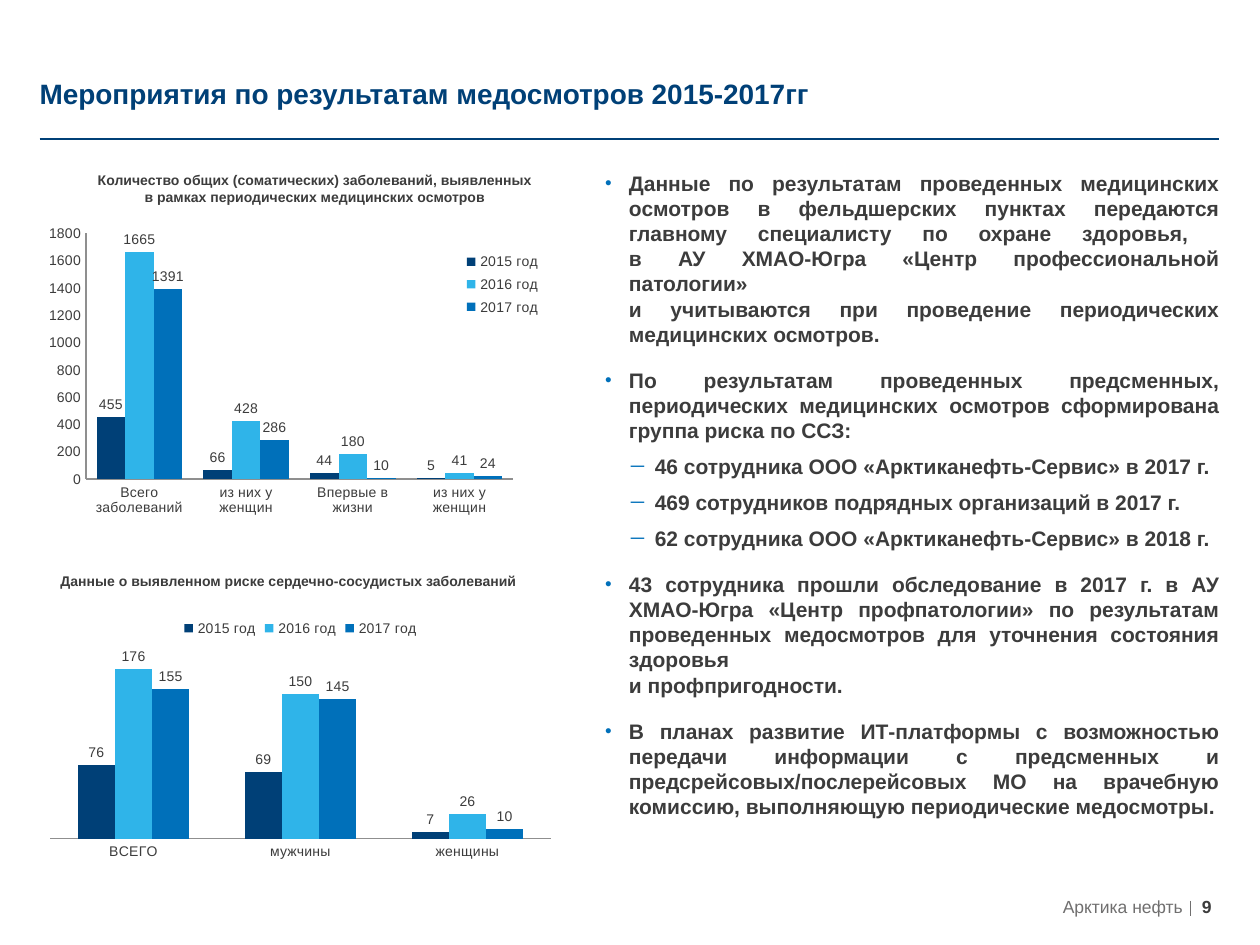
import pptx
import pptx.util
import pptx.dml.color
import pptx.chart.data
import pptx.enum.chart
import pptx.enum.shapes
import pptx.enum.text
import pptx.oxml
import pptx.oxml.ns
import lxml.etree

Cm = pptx.util.Cm
Pt = pptx.util.Pt
Align = pptx.enum.text.PP_ALIGN
Anchor = pptx.enum.text.MSO_ANCHOR
Place = pptx.enum.chart.XL_LEGEND_POSITION
Tick = pptx.enum.chart.XL_TICK_MARK
qn = pptx.oxml.ns.qn

hues = {"navy": "004077", "sky": "2FB4E9", "blue": "0070BA",
        "text": "3C3C3C", "gray": "706F6F", "axis": "8F8F8F"}
rgb = {name: pptx.dml.color.RGBColor.from_string(code) for name, code in hues.items()}


def add_text(area, lines, size, hue="text", bold=True, align=Align.LEFT,
             anchor=Anchor.TOP, inset=(0, 0)):
    box = slide.shapes.add_textbox(*[Cm(n) for n in area])
    frame = box.text_frame
    frame.word_wrap = True
    frame.vertical_anchor = anchor
    frame.margin_left = frame.margin_right = Cm(inset[0])
    frame.margin_top = frame.margin_bottom = Cm(inset[1])
    for rank, line in enumerate(lines):
        para = frame.add_paragraph() if rank else frame.paragraphs[0]
        para.text = line
        para.alignment = align
        for run in para.runs:
            run.font.name = "Arial"
            run.font.size = Pt(size)
            run.font.bold = bold
            run.font.color.rgb = rgb[hue]
    return frame


def set_layout(node, spots, inner=False):
    old = node.find(qn("c:layout"))
    if old is not None:
        node.remove(old)
    layout = lxml.etree.Element(qn("c:layout"))
    manual = lxml.etree.SubElement(layout, qn("c:manualLayout"))
    parts = [("layoutTarget", "inner")] if inner else []
    parts += [("xMode", "edge"), ("yMode", "edge")] + list(zip("xywh", spots))
    for tag, val in parts:
        lxml.etree.SubElement(manual, qn("c:" + tag)).set("val", str(val))
    head = node.find(qn("c:legendPos"))
    node.insert(0 if head is None else node.index(head) + 1, layout)


deck = pptx.Presentation()
deck.slide_width = Cm(25.4)
deck.slide_height = Cm(19.05)
slide = deck.slides.add_slide(deck.slide_layouts[6])

rules = [(0.8, 2.8, 24.58, 2.8, "navy", 1),
         (24, 18.16, 24, 18.47, "gray", 0.75)]
for *ends, hue, width in rules:
    rule = slide.shapes.add_connector(
        pptx.enum.shapes.MSO_CONNECTOR.STRAIGHT, *[Cm(n) for n in ends])
    rule.line.color.rgb = rgb[hue]
    rule.line.width = Pt(width)
    lxml.etree.SubElement(rule._element.spPr, qn("a:effectLst"))

add_text((0.8, 0.53, 23.77, 1.7), ["Мероприятия по результатам медосмотров 2015-2017гг"],
         16, "navy", anchor=Anchor.BOTTOM)
add_text((24.23, 18.06, 0.61, 0.46), ["9"], 10)
add_text((15.1, 18.05, 8.74, 0.46), ["Арктика нефть"], 10, "gray", False,
         Align.RIGHT, Anchor.MIDDLE)

items = [
    (0, "Данные по результатам проведенных медицинских осмотров в фельдшерских пунктах "
        "передаются главному специалисту по охране здоровья, \v"
        "в АУ ХМАО-Югра «Центр профессиональной патологии» \v"
        "и учитываются при проведение периодических медицинских осмотров."),
    (0, "По результатам проведенных предсменных, периодических медицинских осмотров "
        "сформирована группа риска по ССЗ:"),
    (1, "46 сотрудника ООО «Арктиканефть-Сервис» в 2017 г."),
    (1, "469 сотрудников подрядных организаций в 2017 г."),
    (1, "62 сотрудника ООО «Арктиканефть-Сервис» в 2018 г."),
    (0, "43 сотрудника прошли обследование в 2017 г. в АУ ХМАО-Югра «Центр профпатологии» "
        "по результатам проведенных медосмотров для уточнения состояния здоровья \v"
        "и профпригодности."),
    (0, "В планах развитие ИТ-платформы с возможностью передачи информации с предсменных и "
        "предсрейсовых/послерейсовых МО на врачебную комиссию, выполняющую "
        "периодические медосмотры."),
]
body = add_text((12.2, 3.43, 12.39, 13.3), [text for _, text in items], 12,
                align=Align.JUSTIFY)
for rank, (para, (level, _)) in enumerate(zip(body.paragraphs, items)):
    props = para._p.get_or_add_pPr()
    props.set("marL", str(Cm(0.48 + 0.52 * level)))
    props.set("indent", str(-Cm(0.48)))
    color = lxml.etree.SubElement(props, qn("a:buClr"))
    lxml.etree.SubElement(color, qn("a:srgbClr")).set("val", hues["blue"])
    lxml.etree.SubElement(props, qn("a:buSzPct")).set("val", "90000")
    lxml.etree.SubElement(props, qn("a:buFont")).set("typeface", "Arial")
    lxml.etree.SubElement(props, qn("a:buChar")).set("char", "•─"[level])
    if rank:
        para.space_before = Pt(6 if level else 12)

years = ["2015 год", "2016 год", "2017 год"]
plans = [
    dict(area=(0.8, 12.22, 10.52, 5.21), cats=["ВСЕГО", "мужчины", "женщины"],
         rows=[(76, 69, 7), (176, 150, 26), (155, 145, 10)], gap=150, top=200,
         step=50, scale=False, place=Place.TOP, plot=(0.02, 0.155, 0.96, 0.745), key=None),
    dict(area=(0.64, 4.34, 10.95, 7.14),
         cats=["Всего заболеваний", "из них у женщин", "Впервые в жизни", "из них у женщин"],
         rows=[(455, 66, 44, 5), (1665, 428, 180, 41), (1391, 286, 10, 24)], gap=75, top=1800,
         step=200, scale=True, place=Place.RIGHT, plot=(0.1, 0.051, 0.786, 0.694),
         key=(0.787, 0.09, 0.16, 0.21)),
]
for plan in plans:
    data = pptx.chart.data.CategoryChartData()
    data.categories = plan["cats"]
    for year, row in zip(years, plan["rows"]):
        data.add_series(year, row)
    chart = slide.shapes.add_chart(
        pptx.enum.chart.XL_CHART_TYPE.COLUMN_CLUSTERED,
        *[Cm(n) for n in plan["area"]], data).chart
    chart.has_title = False
    chart.font.name = "Arial"
    chart.font.size = Pt(8)
    chart.font.color.rgb = rgb["text"]
    chart.has_legend = True
    chart.legend.position = plan["place"]
    chart.legend.include_in_layout = False
    if plan["key"]:
        set_layout(chart.legend._element, plan["key"])
    set_layout(chart._chartSpace.chart.plotArea, plan["plot"], True)
    for axis in (chart.category_axis, chart.value_axis):
        axis.major_tick_mark = axis.minor_tick_mark = Tick.NONE
        axis.has_major_gridlines = False
        axis.format.line.color.rgb = rgb["axis"]
        axis.format.line.width = Pt(0.75)
    scale = chart.value_axis
    scale.minimum_scale = 0
    scale.maximum_scale = plan["top"]
    scale.major_unit = plan["step"]
    scale.visible = plan["scale"]
    bars = chart.plots[0]
    bars.gap_width = plan["gap"]
    bars.overlap = 0
    bars.vary_by_categories = False
    for row, hue in zip(bars.series, ("navy", "sky", "blue")):
        row.format.fill.solid()
        row.format.fill.fore_color.rgb = rgb[hue]
        row.invert_if_negative = False
        row.data_labels.show_value = True
        row.data_labels.position = pptx.enum.chart.XL_LABEL_POSITION.OUTSIDE_END

heads = [
    ((0, 3.33, 12.7, 0.94), "Количество общих (соматических) заболеваний, выявленных\v"
                            "в рамках периодических медицинских осмотров"),
    ((0.36, 11.41, 10.92, 0.61), "Данные о выявленном риске сердечно-сосудистых заболеваний"),
]
for area, text in heads:
    add_text(area, [text], 8, align=Align.CENTER, inset=(0.25, 0.13))

deck.save("out.pptx")
